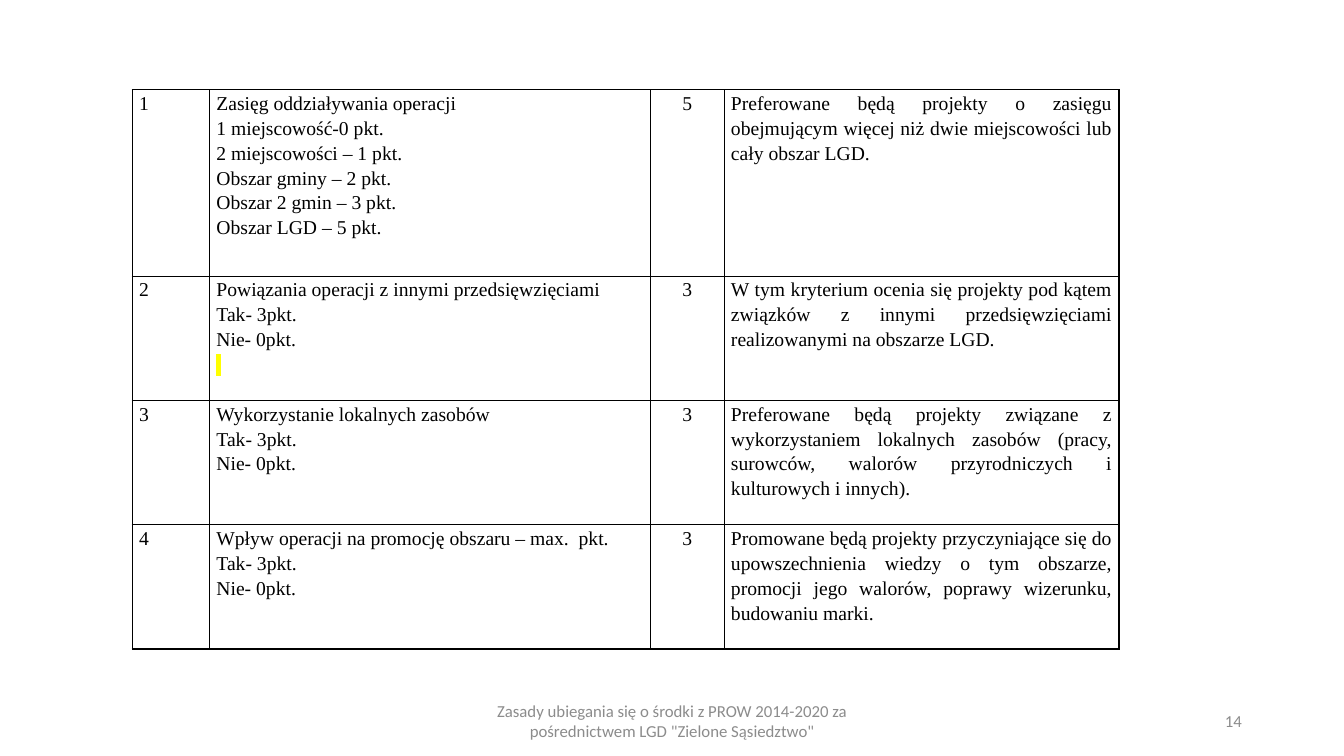
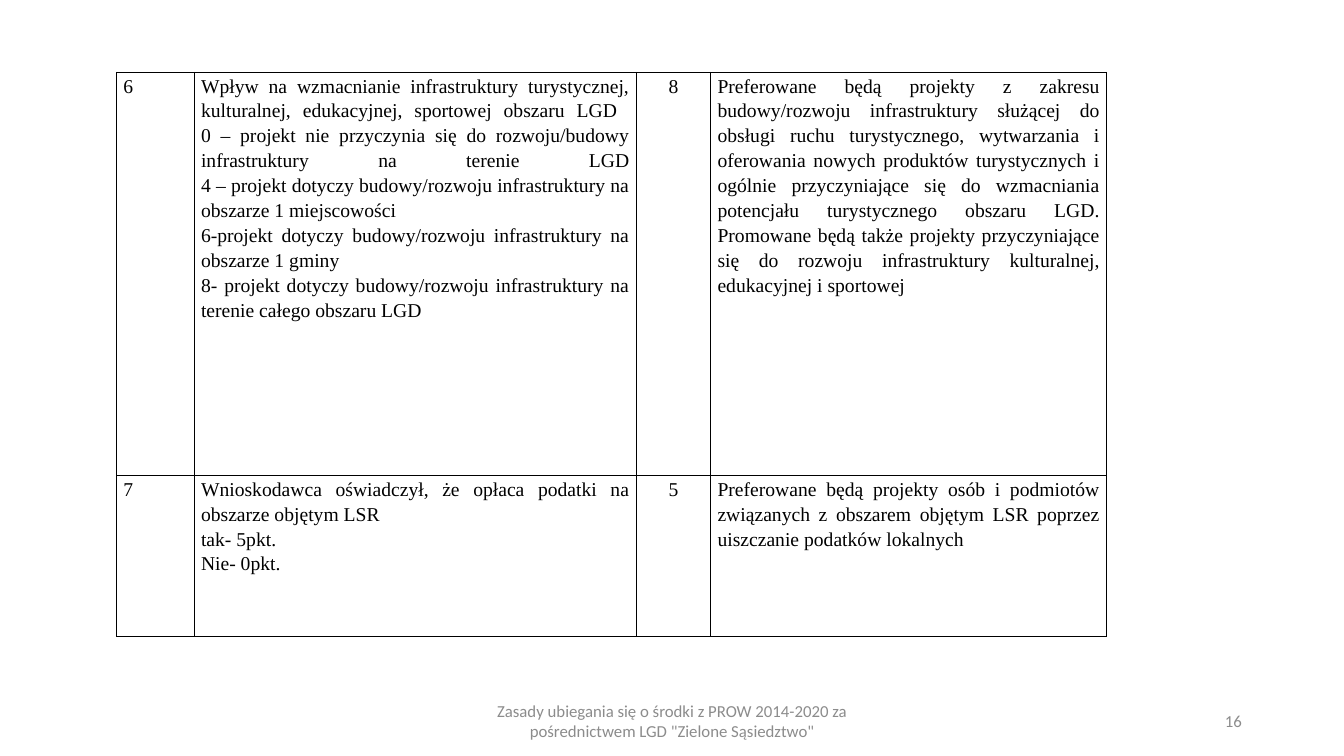
from lxml.etree import SubElement
from pptx import Presentation
from pptx.dml.color import RGBColor
from pptx.enum.text import MSO_ANCHOR as Anchor, PP_ALIGN as Align
from pptx.oxml.ns import qn
from pptx.util import Pt

COLORS = {"ink": "000000", "footer": "8C8C8C", "mark": "FFFF00"}
FOOTER = 'Zasady ubiegania się o środki z PROW 2014-2020 za pośrednictwem LGD "Zielone Sąsiedztwo"'
MARK = " "
COLUMN_ALIGNS = (Align.LEFT, Align.JUSTIFY, Align.CENTER, Align.JUSTIFY)
YES_NO = ["Tak- 3pkt.", "Nie- 0pkt."]

FIRST_CRITERIA = [
    ("1", ["Zasięg oddziaływania operacji", "1 miejscowość-0 pkt.", "2 miejscowości – 1 pkt.",
           "Obszar gminy – 2 pkt.", "Obszar 2 gmin – 3 pkt.", "Obszar LGD – 5 pkt."], "5",
     "Preferowane będą projekty o zasięgu obejmującym więcej niż dwie miejscowości "
     "lub cały obszar LGD."),
    ("2", ["Powiązania operacji z innymi przedsięwzięciami", *YES_NO, MARK], "3",
     "W tym kryterium ocenia się projekty pod kątem związków z innymi przedsięwzięciami "
     "realizowanymi na obszarze LGD."),
    ("3", ["Wykorzystanie lokalnych zasobów", *YES_NO], "3",
     "Preferowane będą projekty związane z wykorzystaniem lokalnych zasobów "
     "(pracy, surowców, walorów przyrodniczych i kulturowych i innych)."),
    ("4", ["Wpływ operacji na promocję obszaru – max.  pkt.", *YES_NO], "3",
     "Promowane będą projekty przyczyniające się do upowszechnienia wiedzy o tym obszarze, "
     "promocji jego walorów, poprawy wizerunku, budowaniu marki."),
]

LAST_CRITERIA = [
    ("6", ["Wpływ na wzmacnianie infrastruktury turystycznej, kulturalnej, edukacyjnej, "
           "sportowej obszaru LGD \v"
           "0 – projekt nie przyczynia się do rozwoju/budowy infrastruktury na terenie LGD\v"
           "4 – projekt dotyczy budowy/rozwoju infrastruktury na obszarze 1 miejscowości",
           "6-projekt dotyczy budowy/rozwoju infrastruktury na obszarze 1 gminy",
           "8- projekt dotyczy budowy/rozwoju infrastruktury na terenie całego obszaru LGD"], "8",
     "Preferowane będą projekty z zakresu budowy/rozwoju infrastruktury służącej do obsługi "
     "ruchu turystycznego, wytwarzania i oferowania nowych produktów turystycznych i ogólnie "
     "przyczyniające się do wzmacniania potencjału turystycznego obszaru LGD. Promowane będą "
     "także projekty przyczyniające się do rozwoju infrastruktury kulturalnej, edukacyjnej "
     "i sportowej"),
    ("7", ["Wnioskodawca oświadczył, że opłaca podatki na obszarze objętym LSR",
           "tak- 5pkt.", "Nie- 0pkt."], "5",
     "Preferowane będą projekty osób i podmiotów związanych z obszarem objętym LSR poprzez "
     "uiszczanie podatków lokalnych"),
]


class Deck:
    def __init__(self):
        self.presentation = Presentation()
        self.presentation.slide_width = Pt(960)
        self.presentation.slide_height = Pt(540)
        self.slide = None

    def new_slide(self, number):
        self.slide = self.presentation.slides.add_slide(self.presentation.slide_layouts[6])
        self.footer_text(FOOTER, 318.2, 324, Align.CENTER)
        self.footer_text(str(number), 678.2, 216, Align.RIGHT)

    def style(self, paragraph, font, size, color, align):
        paragraph.alignment = align
        for run in paragraph.runs:
            run.font.name = font
            run.font.size = Pt(size)
            run.font.color.rgb = RGBColor.from_string(COLORS[color])
        for line_break in paragraph._p.findall(qn("a:br")):
            SubElement(line_break, qn("a:rPr"), sz=str(size * 100))

    def footer_text(self, text, left, width, align):
        shape = self.slide.shapes.add_textbox(Pt(left), Pt(500.4), Pt(width), Pt(28.8))
        text_frame = shape.text_frame
        text_frame.word_wrap = True
        text_frame.vertical_anchor = Anchor.MIDDLE
        text_frame.text = text
        self.style(text_frame.paragraphs[0], "Calibri", 12, "footer", align)

    def highlight(self, run):
        properties = run._r.get_or_add_rPr()
        highlight = SubElement(properties, qn("a:highlight"))
        SubElement(highlight, qn("a:srgbClr"), val=COLORS["mark"])
        properties.find(qn("a:solidFill")).addnext(highlight)

    def borders(self, cell):
        properties = cell._tc.get_or_add_tcPr()
        for side in ("lnL", "lnR", "lnT", "lnB"):
            line = SubElement(properties, qn(f"a:{side}"), w=str(Pt(1)))
            fill = SubElement(line, qn("a:solidFill"))
            SubElement(fill, qn("a:srgbClr"), val=COLORS["ink"])

    def fill_cell(self, cell, lines, align):
        cell.margin_left = cell.margin_right = Pt(4.9)
        cell.margin_top = cell.margin_bottom = 0
        self.borders(cell)
        cell.fill.background()
        cell.text_frame.text = "\n".join(lines)
        for paragraph in cell.text_frame.paragraphs:
            paragraph.line_spacing = 1.15
            self.style(paragraph, "Times New Roman", 14, "ink", align)
            if paragraph.text == MARK:
                self.highlight(paragraph.runs[0])

    def criteria_table(self, left, top, widths, heights, criteria):
        frame = self.slide.shapes.add_table(len(heights), len(widths), Pt(left), Pt(top),
                                            Pt(sum(widths)), Pt(sum(heights)))
        table = frame.table
        table.first_row = table.horz_banding = False
        for column, width in zip(table.columns, widths):
            column.width = Pt(width)
        for row, height, criterion in zip(table.rows, heights, criteria):
            row.height = Pt(height)
            for cell, content, align in zip(row.cells, criterion, COLUMN_ALIGNS):
                lines = [content] if isinstance(content, str) else content
                self.fill_cell(cell, lines, align)


def main():
    deck = Deck()
    deck.new_slide(14)
    deck.criteria_table(94.5, 64.1, (55.2, 314.8, 52.8, 282), (133.2, 88.8, 88.8, 88.8),
                        FIRST_CRITERIA)
    deck.new_slide(16)
    deck.criteria_table(83.3, 51.7, (55.4, 316, 53, 283), (288, 115.2), LAST_CRITERIA)
    deck.presentation.save("out.pptx")


if __name__ == "__main__":
    main()
